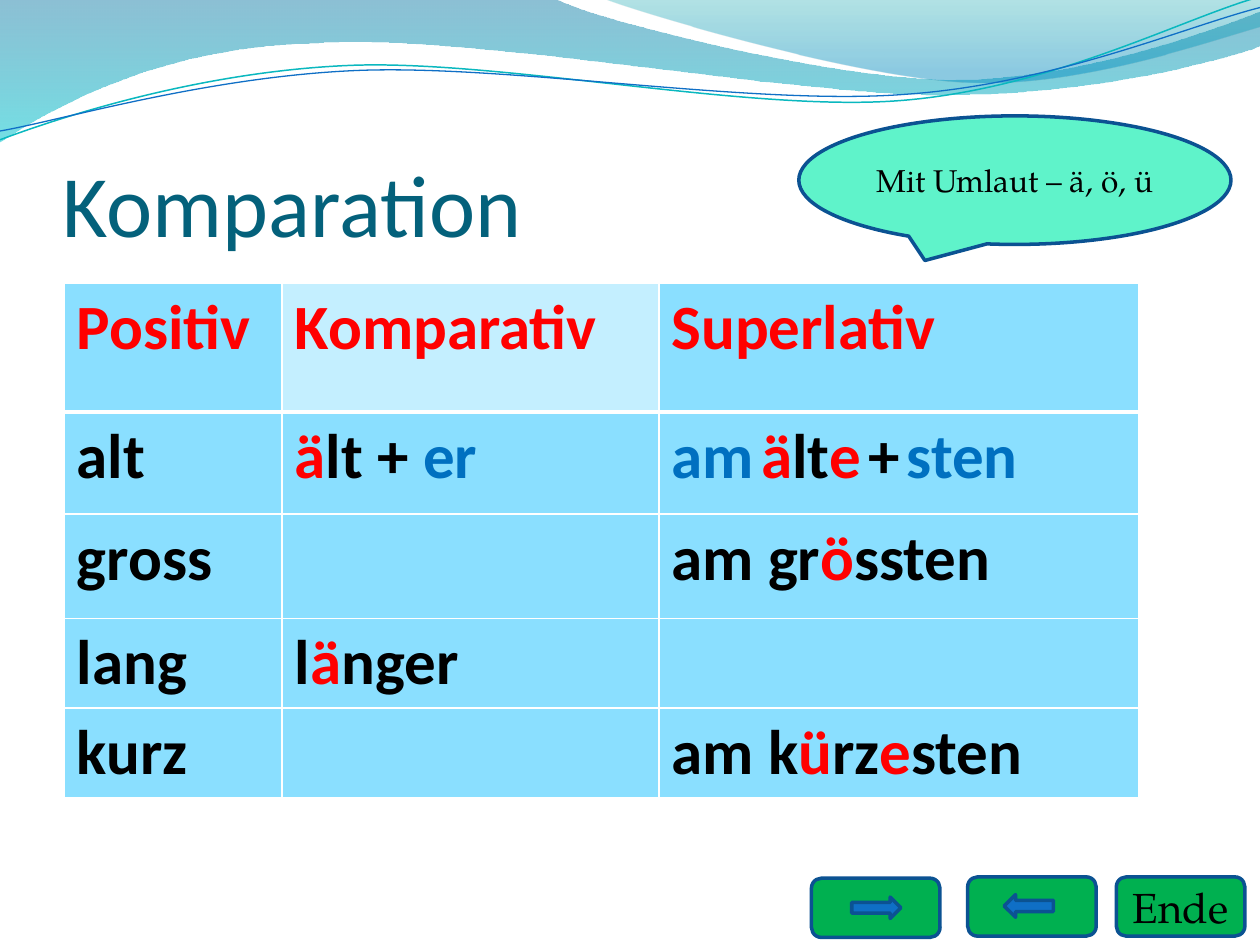
from lxml import etree
from pptx import Presentation
from pptx.dml.color import RGBColor
from pptx.enum import shapes, text
from pptx.oxml import ns
from pptx.util import Inches, Pt

BLACK = RGBColor(0x00, 0x00, 0x00)
RED = RGBColor(0xFF, 0x00, 0x00)
BLUE = RGBColor(0x00, 0x70, 0xC0)
TITLE = RGBColor(0x04, 0x61, 0x7B)
CELL = RGBColor(0x8A, 0xDF, 0xFF)
CELL_LIGHT = RGBColor(0xC4, 0xEF, 0xFF)
GREEN = RGBColor(0x00, 0xB0, 0x50)
MINT = RGBColor(0x5F, 0xF3, 0xCA)
ACCENT = RGBColor(0x0F, 0x6F, 0xC6)
OUTLINE = RGBColor(0x0B, 0x52, 0x92)
TEAL = RGBColor(0x0A, 0xB8, 0xBF)
WAVE_TOP = RGBColor(0x00, 0x74, 0xA1)
WAVE_BOTTOM = RGBColor(0x00, 0xC6, 0xCF)
CREST_TOP = RGBColor(0x00, 0xA1, 0xA9)
CREST_BOTTOM = RGBColor(0x00, 0x8B, 0xBF)

prs = Presentation()
prs.slide_width, prs.slide_height = Inches(10), Inches(7.5)
s = prs.slides.add_slide(prs.slide_layouts[6])


def add_curve(segments, close):
    pts = [(Inches(seg[i]), Inches(seg[i + 1])) for seg in segments for i in range(0, len(seg), 2)]
    fb = s.shapes.build_freeform(*pts[0])
    fb.add_line_segments(pts[1:], close=close)
    sp = fb.convert_to_shape()
    sp.shadow.inherit = False
    steps = iter(list(sp.element.spPr.iter(ns.qn("a:lnTo"))))
    for seg in segments[1:]:
        first = next(steps)
        if len(seg) == 6:
            first.tag_name = None
            bezier = etree.Element(ns.qn("a:cubicBezTo"))
            first.addprevious(bezier)
            for step in (first, next(steps), next(steps)):
                bezier.append(step[0])
                step.getparent().remove(step)
    return sp


def add_preset(kind, x, y, w, h, color, label="", size=18):
    sp = s.shapes.add_shape(kind, Inches(x), Inches(y), Inches(w), Inches(h))
    sp.shadow.inherit = False
    sp.fill.solid()
    sp.fill.fore_color.rgb = color
    sp.line.color.rgb = OUTLINE
    sp.line.width = Pt(2)
    if label:
        tf = sp.text_frame
        tf.text = label
        tf.vertical_anchor = text.MSO_ANCHOR.MIDDLE
        p = tf.paragraphs[0]
        p.alignment = text.PP_ALIGN.CENTER
        f = p.runs[0].font
        f.name, f.size, f.color.rgb = "TeX Gyre Pagella", Pt(size), BLACK
    return sp


waves = [
    ([(0, 0), (4.4, -0.01), (4.76, 0.17, 6.64, 0.63, 7.58, 0.63),
      (8.53, 0.63, 9.58, 0.26, 10, 0.09), (10.01, 0.36),
      (9.83, 0.44, 8.7, 0.76, 7.46, 0.75), (6.22, 0.75, 3.82, 0.28, 2.57, 0.34),
      (1.29, 0.36, 0.46, 0.83, -0.01, 1.13), (0, 0)],
     [(0, WAVE_TOP, 45), (1, WAVE_BOTTOM, 55)]),
    ([(4.79, -0.01), (5.09, 0.11, 6.82, 0.62, 7.69, 0.65),
      (8.56, 0.69, 9.61, 0.32, 10, 0.21), (10, 0), (4.79, -0.01)],
     [(0, CREST_TOP, 30), (0.8, CREST_BOTTOM, 45)]),
]
for segments, stops in waves:
    sp = add_curve(segments, True)
    sp.line.fill.background()
    sp.fill.gradient()
    sp.fill.gradient_angle = 270
    for stop, (pos, color, opacity) in zip(sp.fill.gradient_stops, stops):
        stop.position = pos
        stop.color.rgb = color
    for clr, (pos, color, opacity) in zip(sp.element.spPr.iter(ns.qn("a:srgbClr")), stops):
        etree.SubElement(clr, ns.qn("a:alpha"), val=str(opacity * 1000))

lines = [
    ([(0, 1.11), (0.48, 0.93, 1.58, 0.57, 2.77, 0.52),
      (3.95, 0.47, 5.93, 0.89, 7.13, 0.8), (8.33, 0.71, 9.38, 0.15, 9.98, -0.02)], TEAL, 0.85),
    ([(0, 1.04), (0.47, 0.96, 1.64, 0.61, 2.83, 0.56),
      (4.03, 0.51, 5.97, 0.84, 7.17, 0.75), (8.36, 0.67, 9.41, 0.21, 10, 0.06)], ACCENT, 0.75),
]
for segments, color, width in lines:
    sp = add_curve(segments, False)
    sp.fill.background()
    sp.line.color.rgb = color
    sp.line.width = Pt(width)

for x, y, label in [(6.44, 6.97, ""), (7.68, 6.96, ""), (8.86, 6.96, "Ende")]:
    add_preset(shapes.MSO_SHAPE.ROUNDED_RECTANGLE, x, y, 1.02, 0.47, GREEN, label, 24)
for x, y, h, angle in [(6.76, 7.12, 0.17, 0), (7.97, 7.1, 0.18, 180)]:
    sp = add_preset(shapes.MSO_SHAPE.RIGHT_ARROW, x, y, 0.39, h, ACCENT)
    sp.rotation = angle

sp = s.shapes.add_textbox(Inches(0.5), Inches(0.77), Inches(9), Inches(1.25))
tf = sp.text_frame
tf.word_wrap = True
tf.vertical_anchor = text.MSO_ANCHOR.BOTTOM
tf.margin_left = tf.margin_right = tf.margin_bottom = 0
tf.text = "Komparation"
f = tf.paragraphs[0].runs[0].font
f.name, f.size, f.color.rgb = "Calibri", Pt(50), TITLE

rows = [
    [[("Positiv", RED)], [("Komparativ", RED)], [("Superlativ", RED)]],
    [[("alt", BLACK)], [("ä", RED), ("lt + ", BLACK), ("er", BLUE)],
     [("am", BLUE), (" ", BLACK), ("ä", RED), ("lt", BLACK), ("e", RED), (" ", BLACK),
      ("+", BLACK), (" ", BLACK), ("sten", BLUE)]],
    [[("gross", BLACK)], [], [("am gr", BLACK), ("ö", RED), ("ssten", BLACK)]],
    [[("lang", BLACK)], [("l", BLACK), ("ä", RED), ("nger", BLACK)], []],
    [[("kurz", BLACK)], [],
     [("am k", BLACK), ("ü", RED), ("rz", BLACK), ("e", RED), ("sten", BLACK)]],
]
table = s.shapes.add_table(5, 3, Inches(0.51), Inches(2.25), Inches(8.53), Inches(4.08)).table
for col, width in zip(table.columns, [1.73, 2.99, 3.81]):
    col.width = Inches(width)
for row, height in zip(table.rows, [1.02, 0.81, 0.83, 0.71, 0.71]):
    row.height = Inches(height)
for i, row in enumerate(rows):
    for j, runs in enumerate(row):
        cell = table.cell(i, j)
        cell.fill.solid()
        cell.fill.fore_color.rgb = CELL_LIGHT if (i, j) == (0, 1) else CELL
        p = cell.text_frame.paragraphs[0]
        for word, color in runs:
            r = p.add_run()
            r.text = word
            f = r.font
            f.name, f.bold, f.color.rgb = "Calibri", True, color
            f.size = Pt(18 if word == " " else 36)
        tcPr = cell._tc.get_or_add_tcPr()
        for k, side in enumerate(["lnL", "lnR", "lnT", "lnB"]):
            heavy = (i, side) in [(0, "lnB"), (1, "lnT")]
            ln = etree.Element(ns.qn("a:" + side), w=str(Pt(3 if heavy else 1)))
            fill = etree.SubElement(ln, ns.qn("a:solidFill"))
            etree.SubElement(fill, ns.qn("a:srgbClr"), val="FFFFFF")
            tcPr.insert(k, ln)

add_preset(shapes.MSO_SHAPE.OVAL_CALLOUT, 6.34, 0.92, 3.43, 1.02, MINT, "Mit Umlaut – ä, ö, ü")

prs.save("out.pptx")
